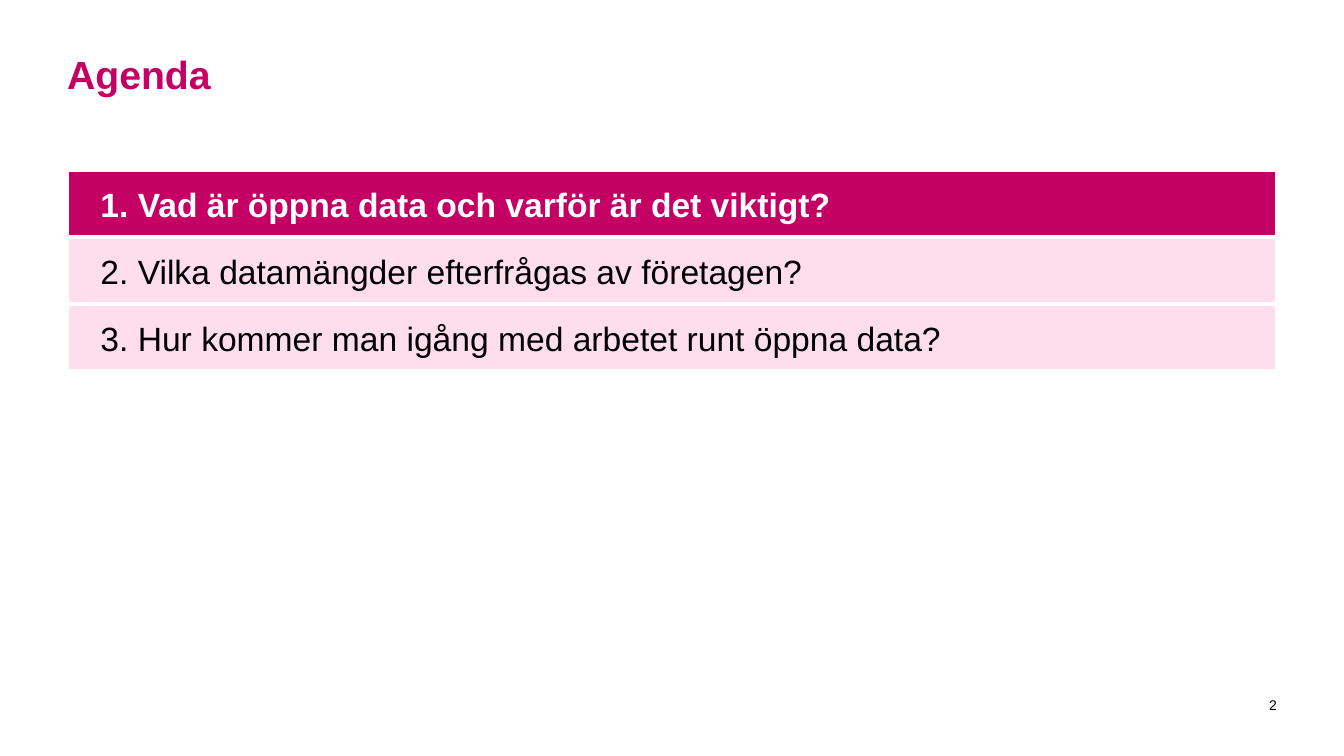
from dataclasses import dataclass

from pptx import Presentation
from pptx.dml.color import RGBColor
from pptx.enum.shapes import MSO_SHAPE
from pptx.enum.text import MSO_ANCHOR, PP_ALIGN
from pptx.util import Pt

RECTANGLE = MSO_SHAPE.RECTANGLE
TOP, MIDDLE = MSO_ANCHOR.TOP, MSO_ANCHOR.MIDDLE
LEFT, RIGHT = PP_ALIGN.LEFT, PP_ALIGN.RIGHT


@dataclass(frozen=True)
class Theme:
    font: str = "Arial"
    accent: RGBColor = RGBColor(0xC4, 0x00, 0x64)
    tint: RGBColor = RGBColor(0xFE, 0xDE, 0xED)
    white: RGBColor = RGBColor(0xFF, 0xFF, 0xFF)
    black: RGBColor = RGBColor(0x00, 0x00, 0x00)
    title_size: float = 28
    item_size: float = 24
    number_size: float = 10


THEME = Theme()
AGENDA = [
    "1. Vad är öppna data och varför är det viktigt?",
    "2. Vilka datamängder efterfrågas av företagen?",
    "3. Hur kommer man igång med arbetet runt öppna data?",
]


def write_text(holder, text, *, size, color, bold=False, align=LEFT,
               anchor=TOP, insets=(0, 0, 0, 0), indent=0, wrap=True):
    """Fill a shape with one formatted paragraph; insets run left, top, right, bottom."""
    frame = holder.text_frame
    frame.word_wrap = wrap
    frame.vertical_anchor = anchor
    (frame.margin_left, frame.margin_top,
     frame.margin_right, frame.margin_bottom) = map(Pt, insets)
    paragraph = frame.paragraphs[0]
    paragraph.alignment = align
    if indent:
        properties = paragraph._p.get_or_add_pPr()
        properties.set("marL", str(Pt(indent)))
        properties.set("indent", "0")
    run = paragraph.add_run()
    run.text = text
    run.font.name = THEME.font
    run.font.size = Pt(size)
    run.font.bold = bold
    run.font.color.rgb = color


def add_title(slide, text, left, top, width, height):
    title = slide.shapes.add_textbox(*map(Pt, (left, top, width, height)))
    write_text(title, text, size=THEME.title_size, color=THEME.accent, bold=True)


def add_agenda(slide, items, current, left, top, width, height):
    """Stack equal bars in the box and highlight the current item."""
    bar_height = height / len(items)
    for index, item in enumerate(items):
        active = index == current
        bar = slide.shapes.add_shape(
            RECTANGLE, Pt(left), Pt(top + index * bar_height), Pt(width), Pt(bar_height))
        bar.shadow.inherit = False
        bar.fill.solid()
        bar.fill.fore_color.rgb = THEME.accent if active else THEME.tint
        bar.line.color.rgb = THEME.white
        bar.line.width = Pt(3)
        write_text(bar, item, size=THEME.item_size, bold=active,
                   color=THEME.white if active else THEME.black,
                   anchor=MIDDLE, insets=(9.4, 9.4, 0, 9.4), indent=14.4, wrap=False)


def add_page_number(slide, number, left, top, width, height):
    page_number = slide.shapes.add_textbox(*map(Pt, (left, top, width, height)))
    write_text(page_number, str(number), size=THEME.number_size, color=THEME.black,
               align=RIGHT, anchor=MIDDLE)


def main():
    presentation = Presentation()
    presentation.slide_width, presentation.slide_height = Pt(960), Pt(540)
    slide = presentation.slides.add_slide(presentation.slide_layouts[6])

    # Heading, agenda bars and footer share the same side margins
    margin, content_width = 48, 864
    add_title(slide, "Agenda", margin, 36, content_width, 65.5)
    add_agenda(slide, AGENDA, 0, margin, 121.5, content_width, 143.7)
    number_width = 17
    add_page_number(slide, 2, margin + content_width - number_width, 498, number_width, 11.5)

    presentation.save("out.pptx")


if __name__ == "__main__":
    main()
